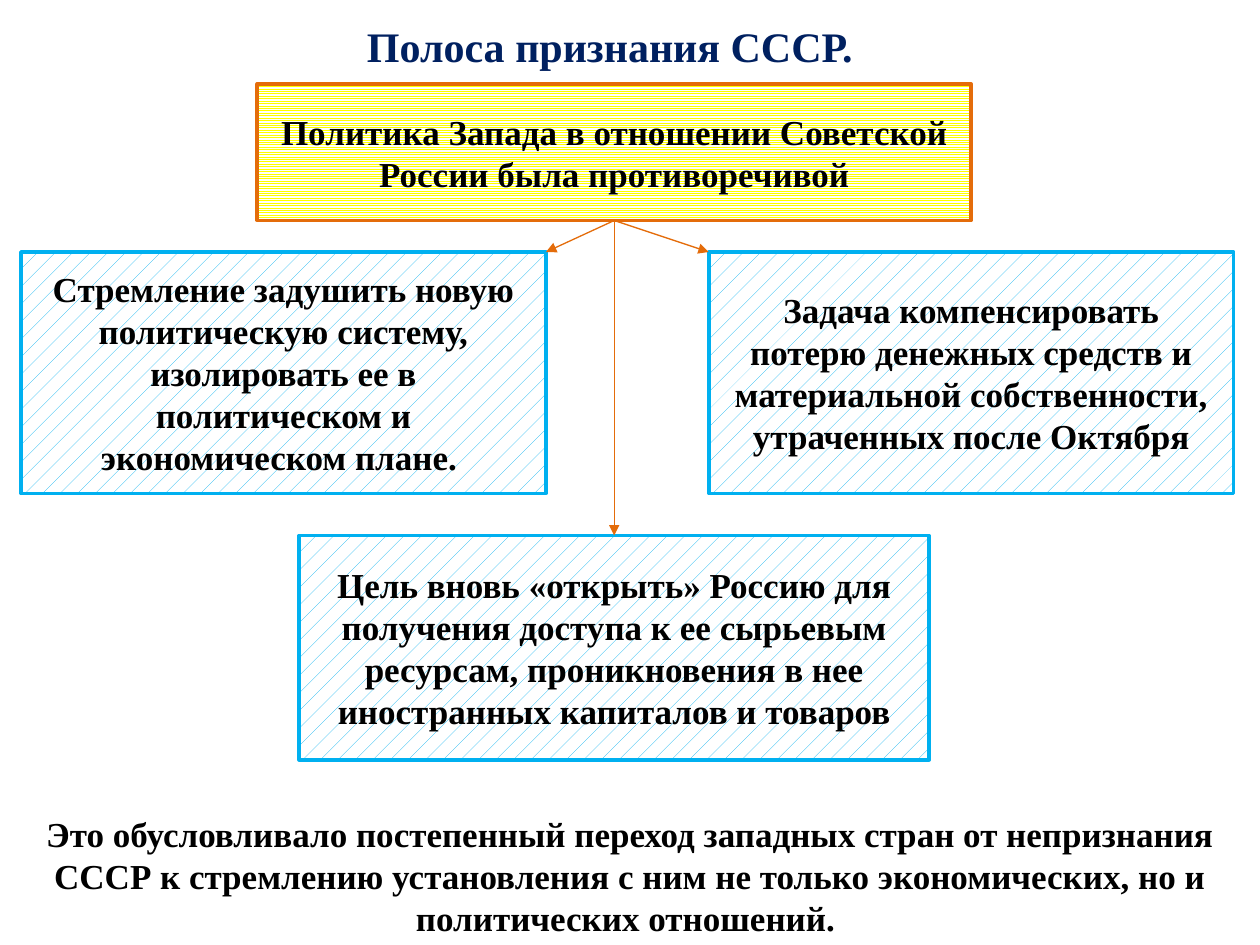
from pptx import Presentation
from pptx import util as u
from pptx.dml.color import RGBColor
from pptx.enum import dml, shapes, text
from pptx.oxml.ns import qn
from lxml import etree

prs = Presentation()
prs.slide_width, prs.slide_height = u.Inches(10), u.Inches(7.5)
col, row = prs.slide_width / 240, prs.slide_height / 180
slide = prs.slides.add_slide(prs.slide_layouts[5])


def paint(color, tint):
    color.rgb = RGBColor.from_string(tint)


def write(box, words, size, tint):
    frame = box.text_frame
    frame.text = words
    frame.word_wrap = True
    frame.auto_size = text.MSO_AUTO_SIZE.NONE
    frame.vertical_anchor = text.MSO_ANCHOR.MIDDLE
    para = frame.paragraphs[0]
    para.alignment = text.PP_ALIGN.CENTER
    font = para.runs[0].font
    font.name, font.size, font.bold = "Times New Roman", u.Pt(size), True
    paint(font.color, tint)


title = slide.shapes.title
title.left, title.top = int(67 * col), int(2.64 * row)
title.width, title.height = int(100.3 * col), int(12 * row)
write(title, "Полоса признания СССР. ", 24, "002060")

stripe = dml.MSO_PATTERN.LIGHT_HORIZONTAL
dots = dml.MSO_PATTERN.PERCENT_5
items = [
    (49, 16, 136, 26, stripe, "FFFF00", "E46C0A",
     "Политика Запада в отношении Советской России была противоречивой"),
    (4, 48, 100, 46, dots, "00B0F0", "00B0F0",
     "Стремление задушить новую политическую систему, изолировать ее в "
     "политическом и экономическом плане. "),
    (135, 48, 100, 46, dots, "00B0F0", "00B0F0",
     "Задача компенсировать потерю денежных средств и материальной "
     "собственности, утраченных после Октября"),
    (57, 102, 120, 42.75, dots, "00B0F0", "00B0F0",
     "Цель вновь «открыть» Россию для получения доступа к ее сырьевым "
     "ресурсам, проникновения в нее иностранных капиталов и товаров"),
    (0, 153.8, 240, 26, None, "FFFFFF", "FFFFFF",
     "Это обусловливало постепенный переход западных стран от непризнания "
     "СССР к стремлению установления с ним не только экономических, но и "
     "политических отношений. "),
]

boxes = []
for x, y, wide, high, weave, tint, edge, words in items:
    box = slide.shapes.add_shape(
        shapes.MSO_SHAPE.RECTANGLE,
        int(x * col), int(y * row), int(wide * col), int(high * row))
    box.shadow.inherit = False
    if weave:
        box.fill.patterned()
        box.fill.pattern = weave
        paint(box.fill.fore_color, tint)
        paint(box.fill.back_color, "FFFFFF")
    else:
        box.fill.solid()
        paint(box.fill.fore_color, tint)
    paint(box.line.color, edge)
    box.line.width = u.Pt(2)
    write(box, words, 20, "000000")
    boxes.append(box)

policy, left, right, goal, result = boxes
ends = [
    (left.left + left.width, left.top, None),
    (right.left, right.top, None),
    (goal.left + goal.width // 2, goal.top, goal),
]
for x, y, box in ends:
    arrow = slide.shapes.add_connector(
        shapes.MSO_CONNECTOR.STRAIGHT,
        policy.left + policy.width // 2, policy.top + policy.height, x, y)
    arrow.begin_connect(policy, 2)
    if box:
        arrow.end_connect(box, 0)
    paint(arrow.line.color, "E46C0A")
    arrow.line.width = u.Pt(0.75)
    etree.SubElement(arrow.line._get_or_add_ln(), qn("a:tailEnd"), type="triangle")
    etree.SubElement(arrow._element.spPr, qn("a:effectLst"))

prs.save("out.pptx")
